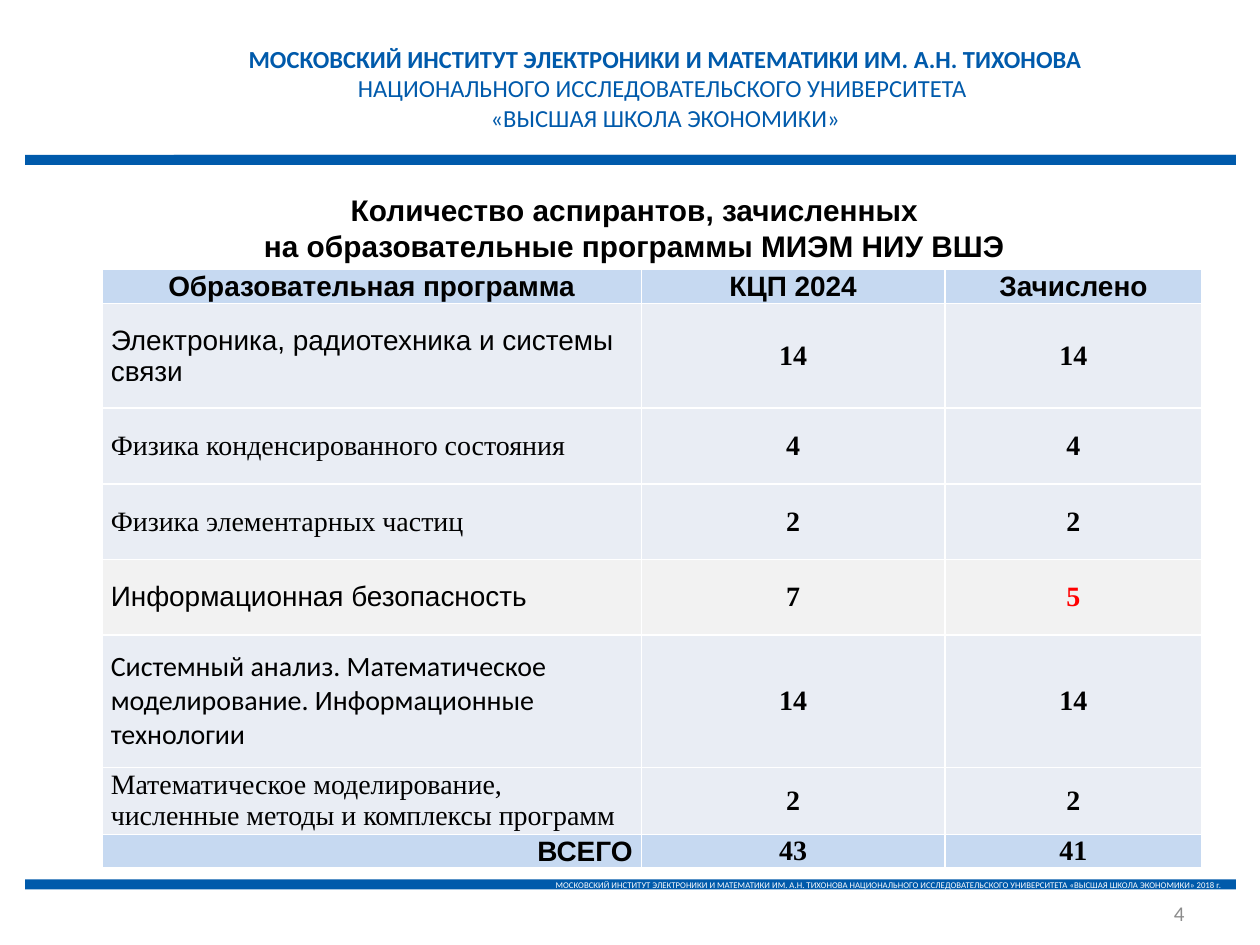
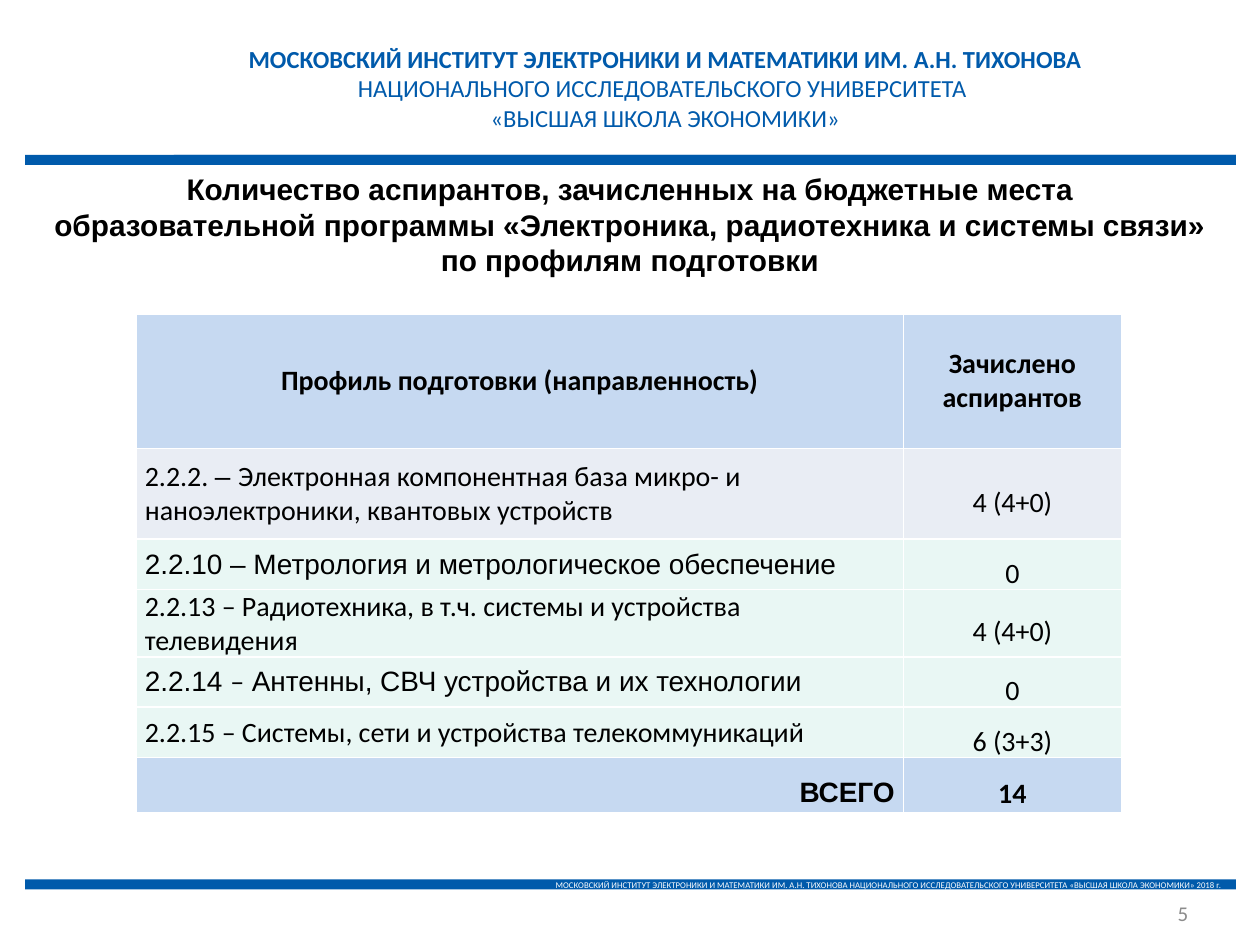
from dataclasses import dataclass
from typing import NamedTuple

from lxml.etree import SubElement
from pptx import Presentation
from pptx.dml.color import RGBColor
from pptx.enum.shapes import MSO_SHAPE
from pptx.enum.text import MSO_ANCHOR, MSO_AUTO_SIZE, PP_ALIGN
from pptx.oxml.ns import qn
from pptx.slide import Slide
from pptx.table import _Cell
from pptx.text.text import TextFrame
from pptx.util import Inches, Pt

WIDE, TALL = Inches(10), Inches(7.5)
COL, ROW = WIDE // 100, TALL // 75

BLUE, WHITE, BLACK, RED, GREY = "005AAB", "FFFFFF", "000000", "FF0000", "8C8C8C"
HEAD, PALE, LIGHT, MINT = "C6D9F1", "E9EDF4", "F2F2F2", "E9F7F4"
ARIAL, CALI, TIMES = "Arial", "Calibri", "Times New Roman"
LEFT, MID, RIGHT = PP_ALIGN.LEFT, PP_ALIGN.CENTER, PP_ALIGN.RIGHT


class Box(NamedTuple):
    left: float
    top: float
    width: float
    height: float

    def place(self) -> tuple[int, int, int, int]:
        return (round(self.left * COL), round(self.top * ROW),
                round(self.width * COL), round(self.height * ROW))


class Run(NamedTuple):
    text: str
    font: str
    bold: bool = False
    hue: str = BLACK


@dataclass
class Cell:
    runs: list[Run]
    align: PP_ALIGN = MID
    space: float = 1.0


@dataclass
class Line:
    height: float
    fill: str
    cells: list[Cell]


@dataclass
class Page:
    number: str
    num_box: Box
    title: list[str]
    title_box: Box
    grid_box: Box
    cols: list[float]
    lines: list[Line]


BANDS = [Box(13.8, 12.3, 84.3, 0.8), Box(2, 12.3, 96.1, 0.8)]
FOOT = Box(2, 69.8, 96.1, 0.8)
CREST = Box(18.6, 3, 68.4, 8.1)
SCHOOL = "МОСКОВСКИЙ ИНСТИТУТ ЭЛЕКТРОНИКИ И МАТЕМАТИКИ ИМ. А.Н. ТИХОНОВА"
PARENT = "НАЦИОНАЛЬНОГО ИССЛЕДОВАТЕЛЬСКОГО УНИВЕРСИТЕТА"
HOUSE = "«ВЫСШАЯ ШКОЛА ЭКОНОМИКИ»"


def paint(code: str) -> RGBColor:
    return RGBColor.from_string(code)


def write(frame: TextFrame, rows: list[list[Run]], size: float,
          align: PP_ALIGN, space: float = 1.0) -> None:
    for place, runs in enumerate(rows):
        para = frame.add_paragraph() if place else frame.paragraphs[0]
        para.alignment = align
        para.line_spacing = space
        for item in runs:
            for part, text in enumerate(item.text.split("\n")):
                if part:
                    para.add_line_break()
                run = para.add_run()
                run.text = text
                font = run.font
                font.name, font.size, font.bold = item.font, Pt(size), item.bold
                font.color.rgb = paint(item.hue)


def add_band(slide: Slide, box: Box) -> TextFrame:
    band = slide.shapes.add_shape(MSO_SHAPE.RECTANGLE, *box.place())
    band.shadow.inherit = False
    band.fill.solid()
    band.fill.fore_color.rgb = paint(BLUE)
    band.line.fill.background()
    return band.text_frame


def add_text(slide: Slide, box: Box, rows: list[list[Run]], size: float,
             align: PP_ALIGN, anchor: MSO_ANCHOR) -> None:
    frame = slide.shapes.add_textbox(*box.place()).text_frame
    frame.word_wrap = True
    frame.vertical_anchor = anchor
    write(frame, rows, size, align)


def add_frame(slide: Slide) -> None:
    for box in BANDS:
        add_band(slide, box)
    foot = add_band(slide, FOOT)
    foot.margin_top = foot.margin_bottom = 0
    foot.word_wrap = True
    foot.vertical_anchor = MSO_ANCHOR.MIDDLE
    write(foot, [[Run(f"{SCHOOL} {PARENT} {HOUSE} 2018 г.", CALI, hue=WHITE)]], 5, RIGHT)
    crest = [[Run(SCHOOL, CALI, True, BLUE)],
             [Run(f"{PARENT} \n{HOUSE}", CALI, hue=BLUE)]]
    add_text(slide, CREST, crest, 14, MID, MSO_ANCHOR.TOP)


def set_title(slide: Slide, page: Page) -> None:
    title = slide.shapes.title
    title.left, title.top, title.width, title.height = page.title_box.place()
    frame = title.text_frame
    frame.word_wrap = True
    frame.auto_size = MSO_AUTO_SIZE.NONE
    frame.vertical_anchor = MSO_ANCHOR.MIDDLE
    write(frame, [[Run(text, ARIAL, True)] for text in page.title], 17, MID)


def edge(cell: _Cell) -> None:
    props = cell._tc.get_or_add_tcPr()
    for side in ("lnL", "lnR", "lnT", "lnB"):
        line = SubElement(props, qn(f"a:{side}"), w=str(Pt(1)))
        fill = SubElement(line, qn("a:solidFill"))
        SubElement(fill, qn("a:srgbClr"), val=WHITE)


def add_grid(slide: Slide, page: Page) -> None:
    table = slide.shapes.add_table(
        len(page.lines), len(page.cols), *page.grid_box.place()).table
    table.first_row = table.horz_banding = False
    for col, width in zip(table.columns, page.cols):
        col.width = round(width * COL)
    last = len(page.cols) - 1
    for row, line in zip(table.rows, page.lines):
        row.height = round(line.height * ROW)
        for spot, (cell, data) in enumerate(zip(row.cells, line.cells)):
            edge(cell)
            cell.fill.solid()
            cell.fill.fore_color.rgb = paint(line.fill)
            cell.vertical_anchor = MSO_ANCHOR.MIDDLE
            cell.margin_top = cell.margin_bottom = 0
            cell.margin_left = cell.margin_right = 0 if spot == last else Inches(0.07)
            write(cell.text_frame, [data.runs], 16, data.align, data.space)


def heads(font: str, *texts: str) -> list[Cell]:
    return [Cell([Run(text, font, True)]) for text in texts]


def course(height: float, name: str, font: str, plan: str, real: str,
           fill: str = PALE, hue: str = BLACK) -> Line:
    return Line(height, fill, [Cell([Run(name, font)], LEFT),
                               Cell([Run(plan, TIMES, True)]),
                               Cell([Run(real, TIMES, True, hue)])])


def field(height: float, count: str, *runs: Run, fill: str = MINT) -> Line:
    return Line(height, fill, [Cell(list(runs), LEFT),
                               Cell([Run(count, CALI)], space=1.5)])


def total(space: float = 1.0) -> Cell:
    return Cell([Run("ВСЕГО", ARIAL, True)], RIGHT, space)


PAGES = [
    Page(
        "4", Box(71.7, 71.4, 23.3, 2.2),
        ["Количество аспирантов, зачисленных",
         "на образовательные программы МИЭМ НИУ ВШЭ"],
        Box(4.3, 14.7, 92.1, 6.7),
        Box(8.1, 21.4, 87.3, 47.4), [42.8, 24.1, 20.4],
        [
            Line(2.7, HEAD, heads(ARIAL, "Образовательная программа",
                                  "КЦП 2024", "Зачислено")),
            course(8.3, "Электроника, радиотехника и системы связи", ARIAL, "14", "14"),
            course(6, "Физика конденсированного состояния", TIMES, "4", "4"),
            course(6, "Физика элементарных частиц", TIMES, "2", "2"),
            course(6, "Информационная безопасность", ARIAL, "7", "5", LIGHT, RED),
            course(10.5, "Системный анализ. Математическое моделирование. "
                   "Информационные технологии", CALI, "14", "14"),
            course(5, "Математическое моделирование, численные методы "
                   "и комплексы программ", TIMES, "2", "2"),
            Line(2.5, HEAD, [total(), *heads(TIMES, "43", "41")]),
        ],
    ),
    Page(
        "5", Box(72, 71.4, 23.3, 2.2),
        ["Количество аспирантов, зачисленных на бюджетные места",
         "образовательной программы «Электроника, радиотехника и системы связи»",
         "по профилям подготовки"],
        Box(2, 13, 96, 9.6),
        Box(10.8, 24.9, 78.2, 39.6), [60.9, 17.3],
        [
            Line(10.7, HEAD, heads(CALI, "Профиль подготовки (направленность)",
                                   "Зачислено аспирантов")),
            field(7.2, "4 (4+0)", Run("2.2.2. ", CALI), Run("– ", ARIAL),
                  Run("Электронная компонентная база микро- и наноэлектроники, "
                      "квантовых устройств", CALI), fill=PALE),
            field(4, "0", Run("2.2.10 – Метрология и метрологическое обеспечение", ARIAL)),
            field(4, "4 (4+0)", Run("2.2.13 – Радиотехника, в т.ч. системы "
                                    "и устройства телевидения", CALI)),
            field(4, "0", Run("2.2.14 ", ARIAL), Run("–", CALI),
                  Run(" Антенны, СВЧ устройства и их технологии", ARIAL)),
            field(4, "6 (3+3)",
                  Run("2.2.15 – Системы, сети и устройства телекоммуникаций", CALI)),
            Line(4.4, HEAD, [total(1.5), Cell([Run("14", CALI, True)], space=1.5)]),
        ],
    ),
]


def main() -> None:
    deck = Presentation()
    deck.slide_width, deck.slide_height = WIDE, TALL
    for page in PAGES:
        slide = deck.slides.add_slide(deck.slide_layouts[5])
        add_frame(slide)
        add_grid(slide, page)
        add_text(slide, page.num_box, [[Run(page.number, CALI, hue=GREY)]],
                 12, RIGHT, MSO_ANCHOR.MIDDLE)
        set_title(slide, page)
    deck.save("out.pptx")


if __name__ == "__main__":
    main()
